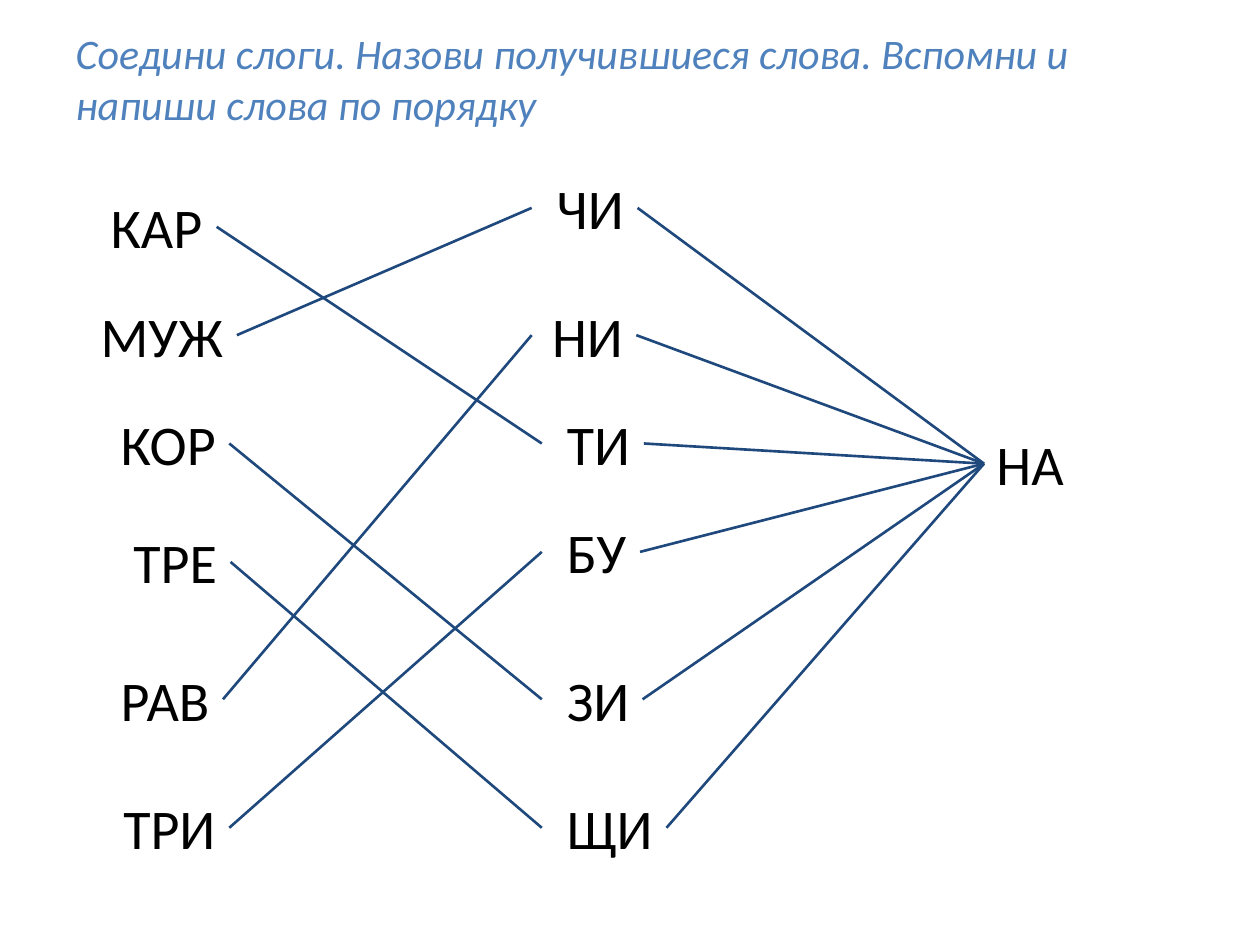
from dataclasses import dataclass

from pptx import Presentation
from pptx.dml.color import RGBColor
from pptx.enum.shapes import MSO_CONNECTOR
from pptx.enum.text import MSO_ANCHOR, MSO_AUTO_SIZE, PP_ALIGN
from pptx.oxml.ns import qn
from pptx.util import Emu, Pt

EMU_PER_PX = 9144  # 100 px to the inch
FONT = "Calibri"
BLACK = RGBColor(0x00, 0x00, 0x00)
TITLE_BLUE = RGBColor(0x4F, 0x81, 0xBD)
LINE_BLUE = RGBColor(0x1F, 0x49, 0x7D)
BOX_HEIGHT = 64
LEFT_SIDE, RIGHT_SIDE = 1, 3


@dataclass(frozen=True)
class Syllable:
    text: str
    left: int
    top: int
    width: int
    indent_size: int = 32  # point size of the leading space


FIRST = [
    Syllable("КАР", 78, 148, 94),
    Syllable("МУЖ", 70, 234, 118),
    Syllable("КОР", 86, 320, 96),
    Syllable(" ТРЕ", 86, 414, 97),
    Syllable("РАВ", 86, 523, 91),
    Syllable(" ТРИ", 78, 625, 104),
]
MIDDLE = [
    Syllable(" ЧИ", 422, 133, 84),
    Syllable(" НИ", 422, 234, 83, indent_size=20),
    Syllable(" ТИ", 430, 320, 81),
    Syllable(" БУ", 430, 406, 78),
    Syllable(" ЗИ", 430, 523, 80),
    Syllable(" ЩИ", 430, 625, 99),
]
LAST = Syllable("НА", 781, 336, 74)
WORDS = [("КАР", "ТИ"), ("МУЖ", "ЧИ"), ("КОР", "ЗИ"),
         ("ТРЕ", "ЩИ"), ("РАВ", "НИ"), ("ТРИ", "БУ")]


def px(length: int) -> Emu:
    return Emu(length * EMU_PER_PX)


def style_span(span, size: int, color: RGBColor, italic: bool = False) -> None:
    span.font.name = FONT
    span.font.size = Pt(size)
    span.font.color.rgb = color
    span.font.italic = italic


def add_syllable(page, syllable: Syllable):
    box = page.shapes.add_textbox(px(syllable.left), px(syllable.top),
                                  px(syllable.width), px(BOX_HEIGHT))
    frame = box.text_frame
    frame.word_wrap = False
    frame.auto_size = MSO_AUTO_SIZE.SHAPE_TO_FIT_TEXT
    paragraph = frame.paragraphs[0]
    letters = syllable.text.lstrip()
    indent = syllable.text[:-len(letters)]
    for text, size in ((indent, syllable.indent_size), (letters, 32)):
        if text:
            span = paragraph.add_run()
            span.text = text
            style_span(span, size, BLACK)
    return box


def join(page, start, end) -> None:
    """Draw a line from the right side of one box to the left side of another."""
    line = page.shapes.add_connector(MSO_CONNECTOR.STRAIGHT, 0, 0, 0, 0)
    line.begin_connect(start, RIGHT_SIDE)
    line.end_connect(end, LEFT_SIDE)
    line.line.color.rgb = LINE_BLUE
    line.line.width = Pt(1.5)
    properties = line._element.spPr
    properties.append(properties.makeelement(qn("a:effectLst"), {}))


def set_title(page) -> None:
    title = page.shapes.title
    title.left, title.top, title.width, title.height = map(px, (50, 30, 900, 64))
    frame = title.text_frame
    frame.text = "Соедини слоги. Назови получившиеся слова. Вспомни и напиши слова по порядку"
    frame.word_wrap = True
    frame.auto_size = MSO_AUTO_SIZE.NONE
    frame.vertical_anchor = MSO_ANCHOR.MIDDLE
    paragraph = frame.paragraphs[0]
    paragraph.alignment = PP_ALIGN.LEFT
    style_span(paragraph.runs[0], 24, TITLE_BLUE, italic=True)


def main() -> None:
    deck = Presentation()
    deck.slide_width, deck.slide_height = px(1000), px(750)
    page = deck.slides.add_slide(deck.slide_layouts[5])
    set_title(page)
    boxes = {syllable.text.strip(): add_syllable(page, syllable)
             for syllable in [*FIRST, *MIDDLE, LAST]}
    for first, middle in WORDS:
        join(page, boxes[first], boxes[middle])
        join(page, boxes[middle], boxes["НА"])
    deck.save("out.pptx")


if __name__ == "__main__":
    main()
